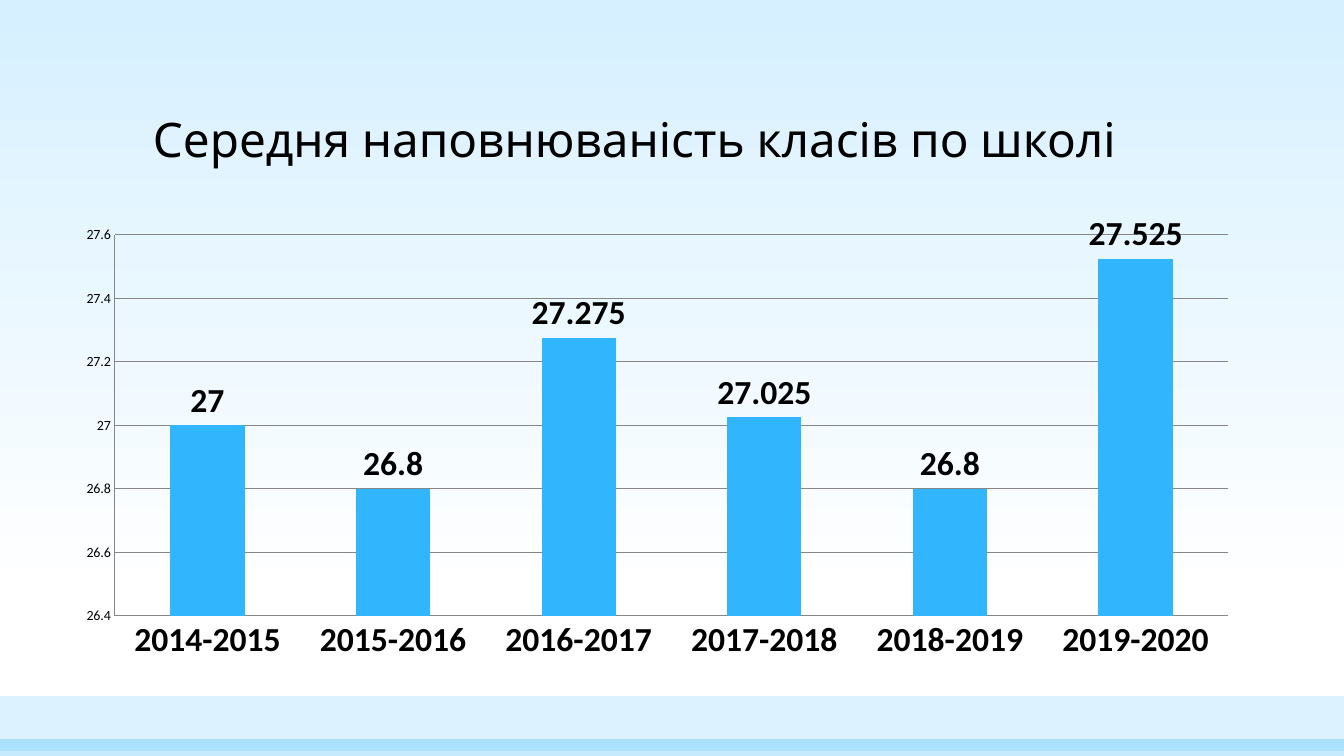
from dataclasses import dataclass

from lxml.etree import SubElement
from pptx import Presentation
from pptx.chart.data import CategoryChartData
from pptx.dml.color import RGBColor
from pptx.enum.chart import XL_CHART_TYPE, XL_LABEL_POSITION, XL_TICK_MARK
from pptx.enum.shapes import MSO_SHAPE
from pptx.enum.text import MSO_ANCHOR
from pptx.oxml import parse_xml
from pptx.oxml.ns import nsdecls, qn
from pptx.util import Pt


@dataclass(frozen=True)
class Theme:
    """Colours, fonts and type sizes of the slide."""
    accent: RGBColor = RGBColor(0x31, 0xB6, 0xFD)
    sky: RGBColor = RGBColor(0xD6, 0xF0, 0xFF)
    white: RGBColor = RGBColor(0xFF, 0xFF, 0xFF)
    ink: RGBColor = RGBColor(0, 0, 0)
    rule: RGBColor = RGBColor(0x86, 0x86, 0x86)
    heading_font: str = "League Spartan"
    chart_font: str = "Calibri"
    heading_size: float = 34
    label_size: float = 24
    scale_size: float = 10


def set_font(font, name, size, color, bold=False):
    """Apply a typeface, size, colour and weight."""
    font.name, font.size, font.bold = name, Pt(size), bold
    font.color.rgb = color


def write_text(frame, text, *, anchor=MSO_ANCHOR.TOP, spacing=1.0, **style):
    """Put formatted text into a text frame."""
    frame.word_wrap = True
    frame.vertical_anchor = anchor
    paragraph = frame.paragraphs[0]
    paragraph.line_spacing = spacing
    run = paragraph.add_run()
    run.text = text
    set_font(run.font, **style)


class SlideBuilder:
    """Draws themed elements on one slide, measured in points."""

    def __init__(self, slide, theme):
        self.slide, self.theme = slide, theme

    def background(self):
        """Fade from sky at the top to white."""
        fill = self.slide.background.fill
        fill.gradient()
        fill.gradient_angle = 270
        fades = ((0, self.theme.sky), (0.79, self.theme.white))
        for stop, (position, color) in zip(fill.gradient_stops, fades):
            stop.position = position
            stop.color.rgb = color

    def band(self, left, top, width, height, opacity):
        """Add a translucent accent band."""
        band = self.slide.shapes.add_shape(
            MSO_SHAPE.RECTANGLE, Pt(left), Pt(top), Pt(width), Pt(height))
        band.shadow.inherit = False
        band.fill.solid()
        band.fill.fore_color.rgb = self.theme.accent
        band.line.fill.background()
        tint = band.fill._xPr.find(qn("a:solidFill"))[0]
        SubElement(tint, qn("a:alpha"), val=str(opacity * 1000))

    def heading(self, text, left, top, width, height):
        """Add the slide heading."""
        heading = self.slide.shapes.add_textbox(Pt(left), Pt(top), Pt(width), Pt(height))
        write_text(heading.text_frame, text, anchor=MSO_ANCHOR.BOTTOM, spacing=0.9,
                   name=self.theme.heading_font, size=self.theme.heading_size,
                   color=self.theme.ink)

    def columns(self, series, values, left, top, width, height, scale, plot_area):
        """Add a labelled column chart."""
        theme = self.theme
        data = CategoryChartData()
        data.categories = list(values)
        data.add_series(series, list(values.values()))
        chart = self.slide.shapes.add_chart(
            XL_CHART_TYPE.COLUMN_CLUSTERED,
            Pt(left), Pt(top), Pt(width), Pt(height), data).chart
        chart.has_title = chart.has_legend = False
        set_font(chart.font, theme.chart_font, theme.scale_size, theme.ink)

        years, averages = chart.category_axis, chart.value_axis
        averages.minimum_scale, averages.maximum_scale, averages.major_unit = scale
        averages.has_major_gridlines = True
        for axis, size, bold in ((years, theme.label_size, True),
                                 (averages, theme.scale_size, False)):
            axis.major_tick_mark = axis.minor_tick_mark = XL_TICK_MARK.NONE
            set_font(axis.tick_labels.font, theme.chart_font, size, theme.ink, bold)
        for line in (years.format.line, averages.format.line,
                     averages.major_gridlines.format.line):
            line.color.rgb = theme.rule
            line.width = Pt(0.75)

        plot = chart.plots[0]
        plot.gap_width = 150
        plot.vary_by_categories = False
        fill = plot.series[0].format.fill
        fill.solid()
        fill.fore_color.rgb = theme.accent
        plot.has_data_labels = True
        labels = plot.data_labels
        labels.show_value = True
        labels.position = XL_LABEL_POSITION.OUTSIDE_END
        set_font(labels.font, theme.chart_font, theme.label_size, theme.ink, True)

        sides = "".join(f'<c:{side} val="{share}"/>'
                        for side, share in zip("xywh", plot_area))
        chart._chartSpace.chart.plotArea.insert(0, parse_xml(
            f'<c:layout {nsdecls("c")}><c:manualLayout><c:layoutTarget val="inner"/>'
            f'<c:xMode val="edge"/><c:yMode val="edge"/>{sides}'
            '</c:manualLayout></c:layout>'))


def main():
    """Build and save the class size slide."""
    deck = Presentation()
    deck.slide_width, deck.slide_height = Pt(960), Pt(540)
    builder = SlideBuilder(deck.slides.add_slide(deck.slide_layouts[6]), Theme())
    builder.background()
    builder.band(0, 497, 960, 39.6, opacity=17)
    builder.band(0, 528, 960, 12, opacity=28)
    builder.heading("Середня наповнюваність класів по школі", 102.2, 58.3, 756, 64.8)
    class_sizes = {
        "2014-2015": 27, "2015-2016": 26.8, "2016-2017": 27.275,
        "2017-2018": 27.025, "2018-2019": 26.8, "2019-2020": 27.525,
    }
    builder.columns("Series 1", class_sizes, 44.6, 152.6, 849, 325.4,
                    scale=(26.4, 27.6, 0.2), plot_area=(0.044, 0.047, 0.937, 0.836))
    deck.save("out.pptx")


if __name__ == "__main__":
    main()
